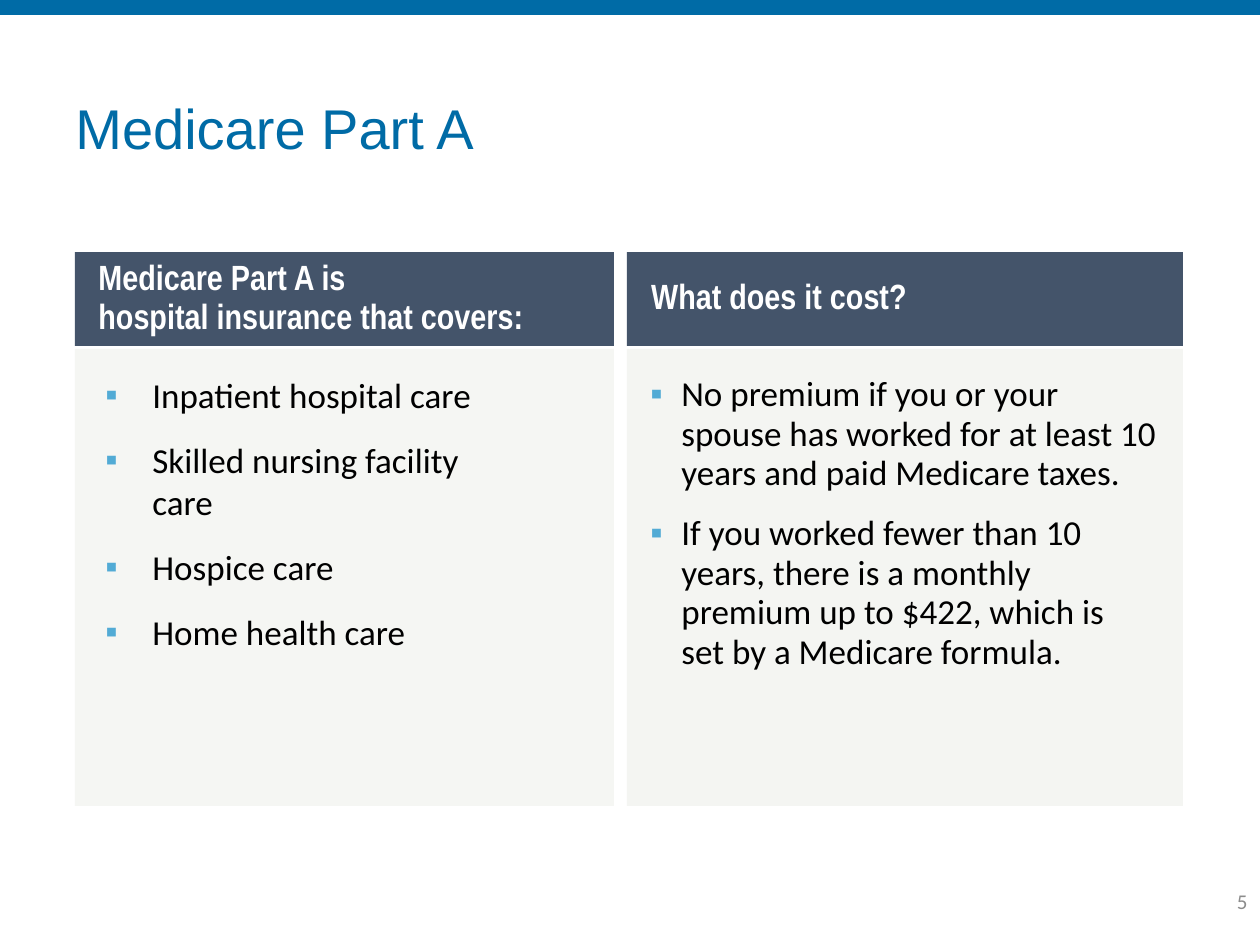
import pptx
import pptx.dml.color
import pptx.enum.shapes
import pptx.enum.text
import pptx.oxml.ns
import pptx.util
from lxml import etree

EMU_PER_PX = 914400 / 126
BLUE, SLATE, SAGE, SKY = "006BA6", "44546A", "AAB198", "52ABD5"
ALIGN = pptx.enum.text.PP_ALIGN
ANCHOR = pptx.enum.text.MSO_ANCHOR
BODY = {"name": "Calibri", "size": pptx.util.Pt(20)}
HEADING = {"name": "Arial Narrow", "size": pptx.util.Pt(20), "bold": True}


def px(length):
    return pptx.util.Emu(round(length * EMU_PER_PX))


def rgb(value):
    return pptx.dml.color.RGBColor.from_string(value)


def add_child(parent, tag, **attributes):
    return etree.SubElement(parent, pptx.oxml.ns.qn(tag), attributes)


def add_panel(page, area, color, opacity=None):
    kind = pptx.enum.shapes.MSO_SHAPE.RECTANGLE
    panel = page.shapes.add_shape(kind, *map(px, area))
    panel.shadow.inherit = False
    panel.line.fill.background()
    panel.fill.solid()
    panel.fill.fore_color.rgb = rgb(color)
    if opacity is not None:
        tint = panel.fill._xPr.find(".//" + pptx.oxml.ns.qn("a:srgbClr"))
        add_child(tint, "a:alpha", val=str(opacity * 1000))


def add_bullet(para, indent):
    properties = para._p.get_or_add_pPr()
    properties.set("marL", str(px(indent)))
    properties.set("indent", str(-px(indent)))
    color = add_child(properties, "a:buClr")
    add_child(color, "a:srgbClr", val=SKY)
    add_child(properties, "a:buFont", typeface="Arial")
    add_child(properties, "a:buChar", char="▪")


def add_text(page, area, lines, font, color, layout=None, anchor=ANCHOR.TOP,
             wrap=True, indent=None, gap=0):
    box = page.shapes.add_textbox(*map(px, area))
    frame = box.text_frame
    frame.word_wrap = wrap
    frame.vertical_anchor = anchor
    for index, line in enumerate(lines):
        para = frame.add_paragraph() if index else frame.paragraphs[0]
        para.text = line
        if indent:
            add_bullet(para, indent)
        if index:
            para.space_before = pptx.util.Pt(gap)
        for name, value in (layout or {}).items():
            setattr(para, name, value)
        for span in para.runs:
            for name, value in font.items():
                setattr(span.font, name, value)
            span.font.color.rgb = rgb(color)


def main():
    deck = pptx.Presentation()
    deck.slide_width, deck.slide_height = px(1260), px(945)
    page = deck.slides.add_slide(deck.slide_layouts[6])

    # Top band, title and page number
    add_panel(page, (0, 0, 1260, 15), BLUE)
    add_text(page, (63, 92, 1134, 79), ["Medicare Part A"],
             {"name": "Arial", "size": pptx.util.Pt(32)}, BLUE,
             {"line_spacing": 0.9}, ANCHOR.MIDDLE)
    add_text(page, (977, 876, 283, 50), ["5"],
             {"name": "Calibri", "size": pptx.util.Pt(12)}, "8C8C8C",
             {"alignment": ALIGN.RIGHT}, ANCHOR.MIDDLE)

    # Column panels with their header bars
    for left, width, opacity in ((75, 539, 11), (627, 556, 12)):
        add_panel(page, (left, 349, width, 457), SAGE, opacity)
        add_panel(page, (left, 252, width, 94), SLATE)

    # Column headings
    add_text(page, (86, 253, 509, 91),
             ["Medicare Part A is\vhospital insurance that covers:"],
             HEADING, "FFFFFF", {"line_spacing": pptx.util.Pt(22)})
    add_text(page, (637, 268, 284, 55), ["What does it cost?"],
             HEADING, "FFFFFF", {"alignment": ALIGN.CENTER}, wrap=False)

    # Covered services
    add_text(page, (93, 367, 417, 252),
             ["Inpatient hospital care", "Skilled nursing facility care",
              "Hospice care", "Home health care"],
             BODY, "000000", indent=47, gap=13.2)

    # Premium rules
    add_text(page, (638, 368, 534, 318),
             ["No premium if you or your spouse has worked for at least 10 "
              "years and paid Medicare taxes.",
              "If you worked fewer than 10 years, there is a monthly premium "
              "up to $422, which is \vset by a Medicare formula."],
             BODY, "000000", {"line_spacing": 0.95}, indent=31, gap=11)

    deck.save("out.pptx")


if __name__ == "__main__":
    main()
